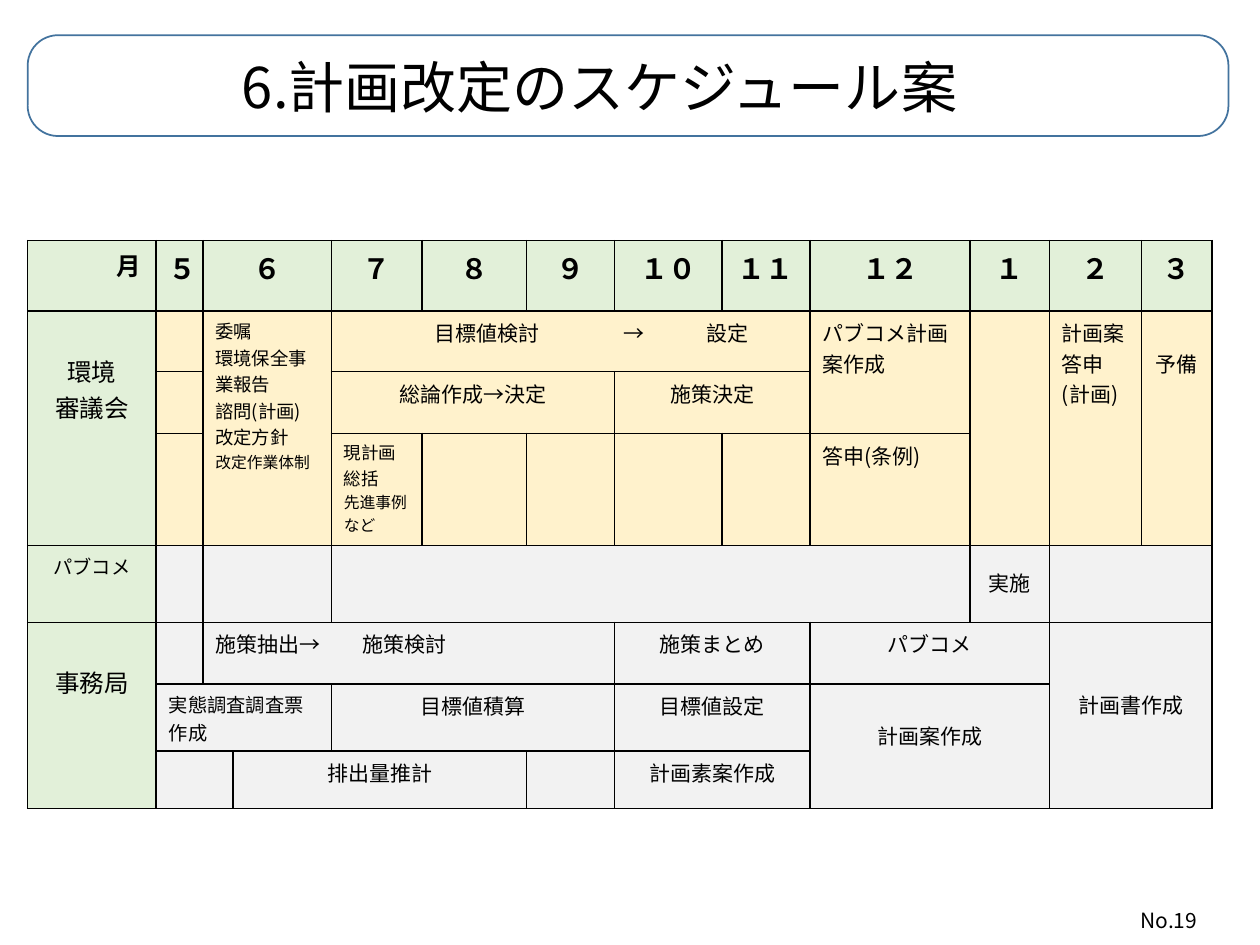
import pptx
import pptx.util
import pptx.dml.color
import pptx.enum.shapes
import pptx.enum.text
import pptx.oxml
import pptx.oxml.ns
from lxml import etree
from pptx.util import Inches

FONT = "Noto Sans CJK JP"
GREEN, YELLOW, GREY = "E2F0D9", "FFF2CC", "F2F2F2"
LEFT = pptx.enum.text.PP_ALIGN.LEFT
CENTER = pptx.enum.text.PP_ALIGN.CENTER
RIGHT = pptx.enum.text.PP_ALIGN.RIGHT
MIDDLE = pptx.enum.text.MSO_ANCHOR.MIDDLE


def color(code):
    return pptx.dml.color.RGBColor.from_string(code)


def write(frame, lines, align, bold=False):
    """Fill a text frame with one paragraph per (text, size) pair."""
    for index, (text, size) in enumerate(lines):
        paragraph = frame.add_paragraph() if index else frame.paragraphs[0]
        paragraph.alignment = align
        run = paragraph.add_run()
        run.text = text
        run.font.size = pptx.util.Pt(size)
        run.font.bold = bold
        run.font.name = FONT
        run.font.color.rgb = color("000000")
        east_asian = etree.SubElement(run.font._element, pptx.oxml.ns.qn("a:ea"))
        east_asian.set("typeface", FONT)


presentation = pptx.Presentation()
presentation.slide_width = Inches(10)
presentation.slide_height = Inches(7.5)
slide = presentation.slides.add_slide(presentation.slide_layouts[5])

# Title in a rounded frame
title = slide.shapes.title
title_frame = slide.shapes.add_shape(
    pptx.enum.shapes.MSO_SHAPE.ROUNDED_RECTANGLE,
    Inches(0.22), Inches(0.28), Inches(9.53), Inches(0.8))
title_frame.adjustments[0] = 0.3
title_frame.shadow.inherit = False
title_frame.fill.solid()
title_frame.fill.fore_color.rgb = color("FFFFFF")
title_frame.line.color.rgb = color("43739E")
title_frame.line.width = pptx.util.Pt(1)
title_frame._element.addnext(title._element)
title.left, title.top = title_frame.left, title_frame.top
title.width, title.height = title_frame.width, title_frame.height
title.text_frame.margin_right = Inches(0.55)
title.text_frame.vertical_anchor = MIDDLE
write(title.text_frame, [("6.計画改定のスケジュール案", 32)], CENTER)

# Schedule table
column_widths = [1.02, 0.37, 0.24, 0.78, 0.72, 0.83, 0.7, 0.85, 0.7, 1.27, 0.63, 0.73, 0.56]
row_heights = [0.56, 0.48, 0.49, 0.89, 0.61, 0.49, 0.53, 0.46]
table = slide.shapes.add_table(
    len(row_heights), len(column_widths), Inches(0.22), Inches(1.91),
    Inches(sum(column_widths)), Inches(sum(row_heights))).table
table.first_row = False
table.horz_banding = False
for column, width in zip(table.columns, column_widths):
    column.width = Inches(width)
for row, height in zip(table.rows, row_heights):
    row.height = Inches(height)

for row_index in range(len(row_heights)):
    for column_index in range(len(column_widths)):
        cell = table.cell(row_index, column_index)
        cell.margin_top = cell.margin_bottom = Inches(0.02)
        properties = cell._tc.get_or_add_tcPr()
        for side in ("L", "R", "T", "B"):
            properties.append(pptx.oxml.parse_xml(
                f'<a:ln{side} {pptx.oxml.ns.nsdecls("a")} w="12700"><a:solidFill>'
                f'<a:srgbClr val="000000"/></a:solidFill></a:ln{side}>'))
        if row_index == 0 or column_index == 0:
            fill = GREEN
        else:
            fill = YELLOW if row_index <= 3 else GREY
        cell.fill.solid()
        cell.fill.fore_color.rgb = color(fill)

# row, column, rows spanned, columns spanned
empty_spans = [(1, 10, 3, 1), (4, 2, 1, 2), (4, 4, 1, 6), (4, 11, 1, 2), (7, 1, 1, 2)]
for row_index, column_index, rows, columns in empty_spans:
    table.cell(row_index, column_index).merge(
        table.cell(row_index + rows - 1, column_index + columns - 1))

# row, column, rows spanned, columns spanned, lines, alignment, top margin
entries = [(0, 0, 1, 1, [("月", 14)], CENTER, 0.05)]
months = ["５", "６", "７", "８", "９", "１０", "１１", "１２", "１", "２", "３"]
for month, column_index in zip(months, [1, 2, *range(4, 13)]):
    columns = 2 if month == "６" else 1
    entries.append((0, column_index, 1, columns, [(month, 16)], CENTER, 0.05))
entries += [
    (1, 0, 3, 1, [("環境", 14), ("審議会", 14)], CENTER, 0.33),
    (1, 2, 3, 2, [("委嘱", 10.5), ("環境保全事業報告", 10.5), ("諮問(計画)", 10.5),
                  ("改定方針", 10.5), ("改定作業体制", 9)], LEFT, 0.05),
    (1, 4, 1, 5, [("目標値検討\t→\t設定", 12)], LEFT, 0.05),
    (1, 9, 2, 1, [("パブコメ計画案作成", 12)], LEFT, 0.05),
    (1, 11, 3, 1, [("計画案", 12), ("答申", 12), ("(計画)", 12)], LEFT, 0.05),
    (1, 12, 3, 1, [("予備", 12)], CENTER, 0.29),
    (2, 4, 1, 3, [("総論作成→決定", 12)], CENTER, 0.05),
    (2, 7, 1, 2, [("施策決定", 12)], CENTER, 0.05),
    (3, 4, 1, 1, [("現計画総括", 10), ("先進事例", 9), ("など", 9)], LEFT, 0.05),
    (3, 9, 1, 1, [("答申(条例)", 12)], LEFT, 0.05),
    (4, 0, 1, 1, [("パブコメ", 11)], CENTER, 0.05),
    (4, 10, 1, 1, [("実施", 12)], CENTER, 0.05),
    (5, 0, 3, 1, [("事務局", 14)], CENTER, 0.33),
    (5, 2, 1, 5, [("施策抽出→\t施策検討", 12)], LEFT, 0.05),
    (5, 7, 1, 2, [("施策まとめ", 12)], CENTER, 0.05),
    (5, 9, 1, 2, [("パブコメ", 12)], CENTER, 0.05),
    (5, 11, 3, 2, [("計画書作成", 12)], CENTER, 0.53),
    (6, 1, 1, 3, [("実態調査調査票作成", 11)], LEFT, 0.05),
    (6, 4, 1, 3, [("目標値積算", 12)], CENTER, 0.05),
    (6, 7, 1, 2, [("目標値設定", 12)], CENTER, 0.05),
    (6, 9, 2, 2, [("計画案作成", 12)], CENTER, 0.29),
    (7, 3, 1, 3, [("排出量推計", 12)], CENTER, 0.05),
    (7, 7, 1, 2, [("計画素案作成", 12)], CENTER, 0.05),
]
for row_index, column_index, rows, columns, lines, align, top in entries:
    cell = table.cell(row_index, column_index)
    if rows > 1 or columns > 1:
        cell.merge(table.cell(row_index + rows - 1, column_index + columns - 1))
    cell.margin_top = Inches(top)
    write(cell.text_frame, lines, align, bold=row_index == 0)

table.cell(0, 0).margin_left = Inches(0.68)
table.cell(1, 4).margin_left = Inches(0.82)
table.cell(4, 10).text_frame.paragraphs[0].line_spacing = 1.5
for row_index, column_index, stops in [(1, 4, [1.5, 2.16]), (5, 2, [1.17])]:
    paragraph = table.cell(row_index, column_index).text_frame.paragraphs[0]
    tab_list = etree.SubElement(paragraph._p.get_or_add_pPr(), pptx.oxml.ns.qn("a:tabLst"))
    for stop in stops:
        etree.SubElement(tab_list, pptx.oxml.ns.qn("a:tab"), pos=str(Inches(stop)), algn="l")

# Page number
page_number = slide.shapes.add_textbox(Inches(6.21), Inches(7.19), Inches(3.39), Inches(0.22))
page_number.text_frame.word_wrap = True
page_number.text_frame.vertical_anchor = MIDDLE
write(page_number.text_frame, [("No.19", 12)], RIGHT)

presentation.save("out.pptx")
